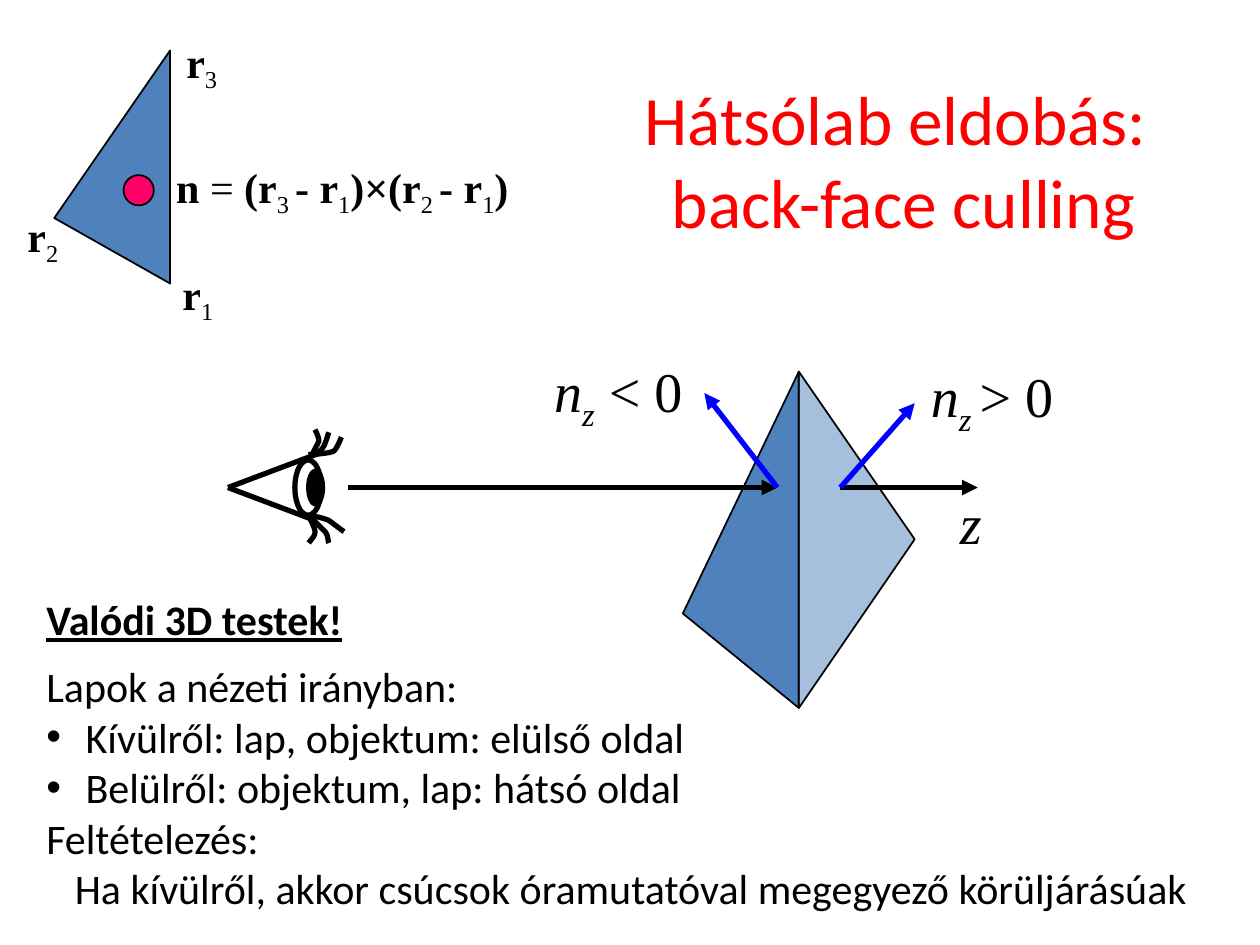
"""Build the back-face culling slide."""
from lxml import etree
from pptx import Presentation
from pptx import util as u
from pptx.dml import color as dml
from pptx.enum import shapes, text
from pptx.oxml import ns

Pt = u.Pt
HEX = {"red": "FF0000", "blue": "4F81BD", "black": "000000",
       "arrow": "0000FF", "pink": "FF0066", "white": "FFFFFF"}
RGB = {name: dml.RGBColor.from_string(code) for name, code in HEX.items()}
SERIF, SANS = "Times New Roman", "Calibri"


def outline(group, points, fill=None, width=1):
    """Draw a filled closed polygon, or an open stroke when fill is None."""
    places = [(Pt(x), Pt(y)) for x, y in points]
    pen = group.build_freeform(*places[0], scale=1.0)
    pen.add_line_segments(places[1:], close=fill is not None)
    form = pen.convert_to_shape()
    form.shadow.inherit = False
    if fill:
        form.fill.solid()
        form.fill.fore_color.rgb = RGB[fill]
    else:
        form.fill.background()
    form.line.color.rgb = RGB["black"]
    form.line.width = Pt(width)
    return form


def label(left, top, width, height, size, parts):
    """Add a formula; style marks are b bold, i italic, s subscript."""
    box = slide.shapes.add_textbox(Pt(left), Pt(top), Pt(width), Pt(height))
    box.text_frame.word_wrap = False
    box.text_frame.auto_size = text.MSO_AUTO_SIZE.SHAPE_TO_FIT_TEXT
    for words, style in parts:
        run = box.text_frame.paragraphs[0].add_run()
        run.text = words
        run.font.name, run.font.size = SERIF, Pt(size)
        run.font.bold, run.font.italic = "b" in style, "i" in style
        run.font.color.rgb = RGB["black"]
        if "s" in style:
            run.font._element.set("baseline", "-25000")


deck = Presentation()
deck.slide_width, deck.slide_height = Pt(720), Pt(540)
slide = deck.slides.add_slide(deck.slide_layouts[6])

title = slide.shapes.add_textbox(Pt(332), Pt(46), Pt(368.6), Pt(90))
title.text_frame.word_wrap = True
title.text_frame.vertical_anchor = text.MSO_ANCHOR.MIDDLE
head = title.text_frame.paragraphs[0]
head.text = "Hátsólab eldobás: \vback-face culling"
head.alignment = text.PP_ALIGN.CENTER
for run in head.runs:
    run.font.name, run.font.size = SANS, Pt(39.6)
    run.font.color.rgb = RGB["red"]

outline(slide.shapes, [(390.2, 350.6), (456.5, 212.4), (456.5, 404.6)], "blue")
back = outline(slide.shapes, [(456.5, 404.6), (522.7, 308.2), (456.5, 212.4)], "blue")
tint = back._element.spPr.find(ns.qn("a:solidFill"))[0]
etree.SubElement(tint, ns.qn("a:alpha")).set("val", "50000")
outline(slide.shapes, [(31, 124.6), (97.2, 28.8), (97.2, 162)], "blue")

eye = slide.shapes.add_group_shape()
axis = 278.6
lines = [
    (slide, 198.7, 444.2, axis, "black"),
    (slide, 480.2, 558.7, axis, "black"),
    (slide, 480.2, 522.7, 230.4, "arrow"),
    (slide, 444.2, 402.5, 224.6, "arrow"),
    (eye, 130.3, 180, 259.9, "black"),
    (eye, 130.3, 180, 297.4, "black"),
]
for owner, start, end, rise, tone in lines:
    line = owner.shapes.add_connector(
        shapes.MSO_CONNECTOR.STRAIGHT, Pt(start), Pt(axis), Pt(end), Pt(rise))
    line.line.color.rgb = RGB[tone]
    line.line.width = Pt(3)
    if owner is slide:
        tip = etree.SubElement(line.line._get_or_add_ln(), ns.qn("a:tailEnd"))
        tip.set("type", "triangle")
    etree.SubElement(line._element.spPr, ns.qn("a:effectLst"))

ovals = [
    (slide, 70.6, 100.1, 17.3, 17.3, "pink", 1),
    (eye, 168.5, 262.8, 15.1, 31.7, "white", 3),
    (eye, 176.4, 269.3, 7.9, 18.7, "black", 3),
]
for owner, left, top, width, height, tone, weight in ovals:
    oval = owner.shapes.add_shape(
        shapes.MSO_SHAPE.OVAL, Pt(left), Pt(top), Pt(width), Pt(height))
    oval.shadow.inherit = False
    oval.fill.solid()
    oval.fill.fore_color.rgb = RGB[tone]
    oval.line.color.rgb = RGB["black"]
    oval.line.width = Pt(weight)

lashes = [
    [(176.4, 259.9), (179.3, 259.2), (182.2, 258.5), (183.6, 257),
     (185.8, 254.9), (187.2, 249.1), (187.9, 247)],
    [(180, 259.9), (182.2, 259.2), (187.9, 259.2), (190.8, 257.8),
     (193, 255.6), (194.4, 251.3), (195.1, 249.8)],
    [(176.4, 294.5), (180.7, 295.2), (184.3, 295.9), (187.9, 297.4),
     (190.8, 299.5), (194.4, 302.4), (196.6, 303.8)],
    [(176.4, 294.5), (177.8, 295.9), (183.6, 301.7), (185.8, 303.8),
     (187.9, 306.7), (187.2, 308.9), (187.9, 310.3)],
    [(176.4, 294.5), (177.8, 298.1), (180, 301.7), (180, 303.8),
     (180, 306.7), (177.8, 308.2), (176.4, 310.3)],
    [(178.6, 259.9), (178.6, 258.5), (181.4, 254.2), (182.2, 252),
     (182.2, 249.8), (180.7, 247), (180, 245.5)],
]
steps = 8
for lash in lashes:
    curve = [lash[0]]
    for first in (0, 3):
        knots = lash[first:first + 4]
        for step in range(1, steps + 1):
            t = step / steps
            mix = ((1 - t) ** 3, 3 * t * (1 - t) ** 2, 3 * t * t * (1 - t), t ** 3)
            curve.append(tuple(sum(m * k[dim] for m, k in zip(mix, knots))
                               for dim in (0, 1)))
    outline(eye.shapes, curve, width=3)

for digit, left, top in [("1", 97.2, 149.8), ("3", 99.4, 17.3), ("2", 8.6, 116.6)]:
    label(left, top, 33.1, 36, 24, [("r", "b"), (digit, "s")])
label(93.6, 88.6, 208.8, 36, 24, [
    ("n ", "b"), ("=", ""), (" (r", "b"), ("3 ", "s"), ("- r", "b"), ("1", "s"),
    (")×(r", "b"), ("2 ", "s"), ("- r", "b"), ("1", "s"), (")", "b")])
label(524.9, 203, 88.6, 45.4, 32, [("n", "i"), ("z ", "is"), ("> 0", "")])
label(309.6, 200.2, 88.6, 45.4, 32, [("n", "i"), ("z", "is"), (" < 0", "")])
label(541.4, 275.8, 27.4, 45.4, 32, [("z", "i")])

body = slide.shapes.add_textbox(Pt(19.4), Pt(335.5), Pt(731.5), Pt(191.5))
body.text_frame.word_wrap = False
notes = [
    ("Valódi 3D testek!", 0, False),
    ("Lapok a nézeti irányban:", 0, False),
    ("Kívülről: lap, objektum: elülső oldal", 22.5, True),
    ("Belülről: objektum, lap: hátsó oldal", 22.5, True),
    ("Feltételezés:", 0, False),
    ("Ha kívülről, akkor csúcsok óramutatóval megegyező körüljárásúak", 16.3, False),
]
body.text_frame.text = "\n".join(words for words, inset, dot in notes)
for row, (words, inset, dot) in zip(body.text_frame.paragraphs, notes):
    font = row.runs[0].font
    font.name, font.size = SANS, Pt(24)
    font.color.rgb = RGB["black"]
    props = row._p.get_or_add_pPr()
    props.set("marL", str(Pt(inset)))
    if dot:
        props.set("indent", str(-Pt(inset)))
        etree.SubElement(props, ns.qn("a:buFont")).set("typeface", "Arial")
        etree.SubElement(props, ns.qn("a:buChar")).set("char", "•")
lead, after = body.text_frame.paragraphs[:2]
lead.runs[0].font.bold = lead.runs[0].font.underline = True
after.space_before = Pt(9.8)

deck.save("out.pptx")
